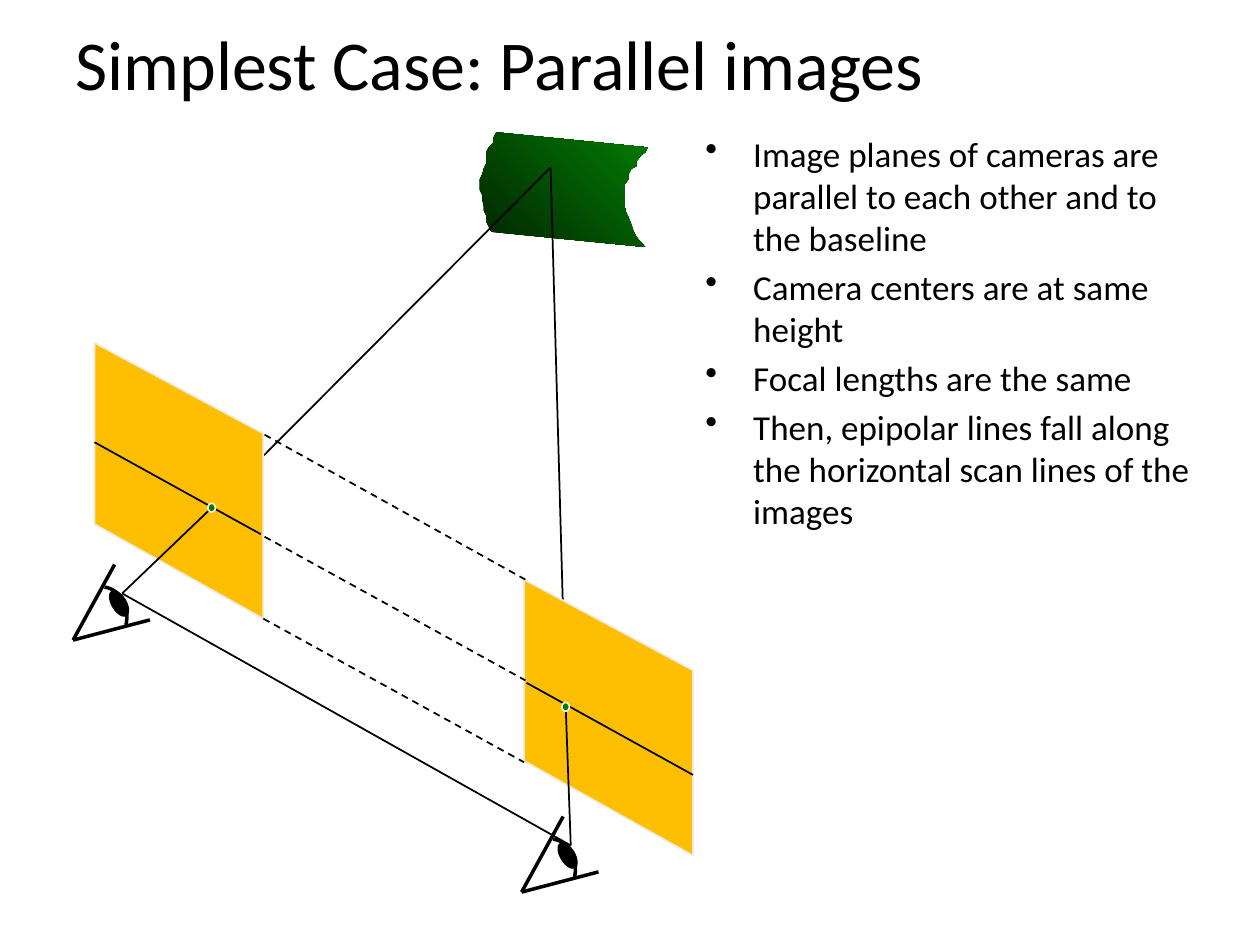
import pptx
import pptx.util
import pptx.dml.color
import pptx.enum.dml
import pptx.enum.shapes
import pptx.enum.text
import pptx.oxml
import pptx.oxml.ns
from dataclasses import dataclass


@dataclass(frozen=True)
class Theme:
    font: str = "Calibri"
    title_size: int = 40
    body_size: int = 20
    ink: str = "000000"
    plane: str = "FEBF02"
    edge: str = "EEECE1"
    green: str = "037C03"
    dark_green: str = "012501"
    thin: int = 1
    thick: int = 2


THEME = Theme()
COLUMNS, ROWS = 100, 75  # every place below is (column, row)

# Content
TITLE = "Simplest Case: Parallel images"
BULLETS = [
    "Image planes of cameras are parallel to each other and to the baseline",
    "Camera centers are at same height",
    "Focal lengths are the same",
    "Then, epipolar lines fall along the horizontal scan lines of the images",
]
TITLE_AREA = (5, 0, 90, 10)
BODY_AREA = (55, 10, 41.7, 57.5)

# Scene geometry
SURFACE = [
    (39.4, 10.5), (39.2, 10.9), (39.2, 11.3), (38.8, 11.7), (38.6, 12.1),
    (38.6, 13), (38.4, 13.4), (38.3, 13.8), (38.1, 14.2), (38.1, 15.1),
    (38.3, 15.5), (38.3, 15.9), (38.4, 16.3), (38.4, 16.7), (38.6, 17.1),
    (38.6, 17.6), (38.8, 18), (39, 18.4), (51.2, 19.6), (50.5, 18.8),
    (50.3, 18.4), (50.1, 17.8), (49.9, 17.3), (49.7, 16.9), (49.6, 16.5),
    (49.6, 14.6), (49.9, 14.2), (49.9, 13.8), (50.1, 13.4), (50.5, 13.2),
    (50.5, 12.8), (50.9, 12.3), (51.2, 12.1), (51.4, 11.7),
]
POINT = (43.7, 13.3)
PLANE = [(7.5, 41.6), (20.9, 49.1), (20.9, 34.4), (7.5, 27.2)]
SCAN_LINE = [(7.5, 35.1), (20.7, 42.4)]
PLANE_STEP = (34.1, 18.8)
SCAN_STEP = (34.3, 19.1)
EYE_STEP = (35.6, 20)
CENTERS = [(9.7, 47.1), (45.3, 67.1)]
HITS = [(16.8, 40.3), (44.9, 56.1)]
DOT_SIZE = (0.6, 0.7)
EYE_LIDS = [[(9.1, 44.8), (5.8, 50.8)], [(5.8, 50.8), (11.9, 49.2)]]
EYE_CURVE = [(8.3, 46.6), (9.6, 46.8), (10.3, 48.2), (10, 49.6)]
PUPIL = (8.9, 46.8, 1.1, 2.2)
PUPIL_TURN = 329
LINKS = [
    [(21, 34.5), (41.7, 46)],
    [(20.9, 49.1), (41.6, 60.5)],
    [(21, 42.6), (41.7, 54)],
]

deck = pptx.Presentation()
deck.slide_width = pptx.util.Inches(10)
deck.slide_height = pptx.util.Inches(7.5)
page = deck.slides.add_slide(deck.slide_layouts[6])


def color(code):
    return pptx.dml.color.RGBColor.from_string(code)


def grid(*numbers):
    """Turn alternating columns and rows into slide lengths."""
    units = (deck.slide_width / COLUMNS, deck.slide_height / ROWS)
    return [round(number * units[i % 2]) for i, number in enumerate(numbers)]


def shift(points, step, times=1):
    return [(x + step[0] * times, y + step[1] * times) for x, y in points]


def stroke(shape, code=THEME.ink, width=THEME.thin):
    shape.line.color.rgb = color(code)
    shape.line.width = pptx.util.Pt(width)


def line(ends, width=THEME.thin, dashed=False):
    straight = pptx.enum.shapes.MSO_CONNECTOR.STRAIGHT
    connector = page.shapes.add_connector(straight, *grid(*ends[0], *ends[1]))
    stroke(connector, width=width)
    if dashed:
        connector.line.dash_style = pptx.enum.dml.MSO_LINE.DASH
    properties = connector._element.spPr
    properties.append(pptx.oxml.parse_xml(
        f"<a:effectLst {pptx.oxml.ns.nsdecls('a')}/>"))


def outline(points, close=True):
    places = [tuple(grid(*point)) for point in points]
    builder = page.shapes.build_freeform(*places[0], scale=1.0)
    builder.add_line_segments(places[1:], close=close)
    shape = builder.convert_to_shape()
    shape.shadow.inherit = False
    return shape


def oval(area, fill, edge):
    kind = pptx.enum.shapes.MSO_SHAPE.OVAL
    shape = page.shapes.add_shape(kind, *grid(*area))
    shape.shadow.inherit = False
    shape.fill.solid()
    shape.fill.fore_color.rgb = color(fill)
    stroke(shape, edge)
    return shape


def curve(controls, steps=16):
    """Points along a cubic curve."""
    a, b, c, d = controls
    for i in range(steps + 1):
        t = i / steps
        weights = ((1 - t) ** 3, 3 * t * (1 - t) ** 2, 3 * t * t * (1 - t), t ** 3)
        yield tuple(sum(w * p[axis] for w, p in zip(weights, (a, b, c, d)))
                    for axis in (0, 1))


def eye(times):
    arc = outline(list(curve(shift(EYE_CURVE, EYE_STEP, times))), close=False)
    arc.fill.background()
    stroke(arc, width=THEME.thick)
    for lid in EYE_LIDS:
        line(shift(lid, EYE_STEP, times), THEME.thick)
    corner = shift([PUPIL[:2]], EYE_STEP, times)[0]
    oval((*corner, *PUPIL[2:]), THEME.ink, THEME.ink).rotation = PUPIL_TURN


def write(area, texts, size, bulleted=False):
    box = page.shapes.add_textbox(*grid(*area))
    frame = box.text_frame
    frame.word_wrap = True
    frame.text = "\n".join(texts)
    for para in frame.paragraphs:
        para.font.name = THEME.font
        para.font.size = pptx.util.Pt(size)
        para.font.color.rgb = color(THEME.ink)
        if bulleted:
            para.space_before = pptx.util.Pt(size * 0.2)
            properties = para._p.get_or_add_pPr()
            indent = pptx.util.Inches(0.38)
            properties.set("marL", str(indent))
            properties.set("indent", str(-indent))
            bullet = pptx.oxml.parse_xml(
                f"<a:buChar {pptx.oxml.ns.nsdecls('a')} char='•'/>")
            properties.insert_element_before(bullet, "a:tabLst", "a:defRPr", "a:extLst")
    return frame


# Text
title = write(TITLE_AREA, [TITLE], THEME.title_size)
title.vertical_anchor = pptx.enum.text.MSO_ANCHOR.MIDDLE
write(BODY_AREA, BULLETS, THEME.body_size, bulleted=True)

# Observed surface
surface = outline(SURFACE)
surface.line.fill.background()
surface.fill.gradient()
surface.fill.gradient_angle = 45
for stop, code, position in zip(surface.fill.gradient_stops,
                                (THEME.dark_green, THEME.green), (0, 1)):
    stop.color.rgb = color(code)
    stop.position = position

# Baseline, then for each camera the far ray, image plane and near ray
line(CENTERS)
for side, (center, hit) in enumerate(zip(CENTERS, HITS)):
    line([hit, POINT])
    plane = outline(shift(PLANE, PLANE_STEP, side))
    plane.fill.solid()
    plane.fill.fore_color.rgb = color(THEME.plane)
    stroke(plane, THEME.edge)
    line([center, hit])
    eye(side)

# Scan lines and the dashed links between the planes
for link in LINKS:
    line(link, dashed=True)
for side, (x, y) in enumerate(HITS):
    line(shift(SCAN_LINE, SCAN_STEP, side))
    width, height = DOT_SIZE
    oval((x - width / 2, y - height / 2, width, height), THEME.green, THEME.edge)

deck.save("out.pptx")
